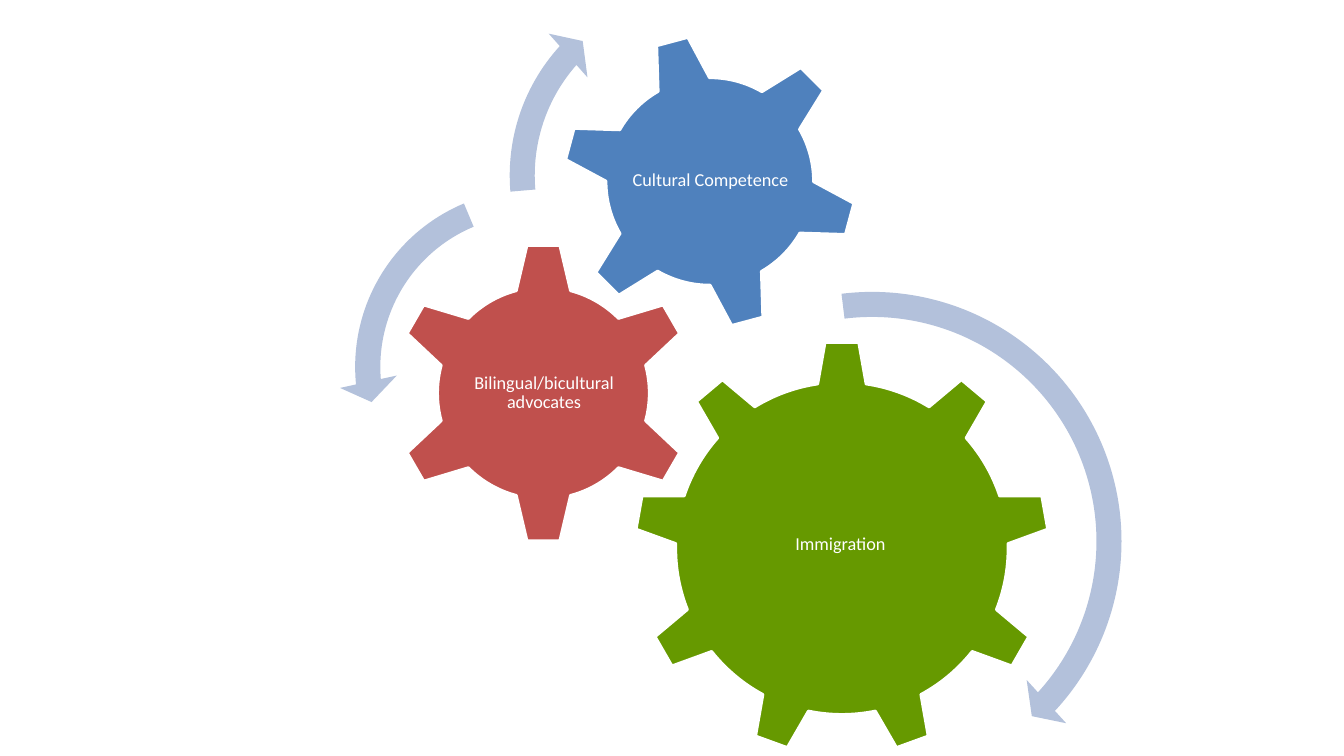
from pptx import Presentation
from pptx.dml.color import RGBColor
from pptx.enum.shapes import MSO_SHAPE as Preset
from pptx.enum.text import MSO_ANCHOR as Anchor, PP_ALIGN as Align
from pptx.util import Inches, Pt

COLORS = {
    "immigration": "669900",
    "advocates": "C0504D",
    "competence": "4F81BD",
    "arrow": "B3C1DB",
    "white": "FFFFFF",
}


def color(name):
    return RGBColor.from_string(COLORS[name])


def add_filled_square(group, preset, left, top, size, fill):
    """Add a preset shape of equal width and height, without a shadow."""
    shape = group.shapes.add_shape(
        preset, Inches(left), Inches(top), Inches(size), Inches(size))
    shape.shadow.inherit = False
    shape.fill.solid()
    shape.fill.fore_color.rgb = color(fill)
    return shape


def add_gear(group, preset, left, top, size, fill, rotation=0):
    gear = add_filled_square(group, preset, left, top, size, fill)
    gear.rotation = rotation
    gear.line.color.rgb = color("white")
    gear.line.width = Pt(2)


def add_label(group, text, left, top, width, height):
    label = group.shapes.add_textbox(
        Inches(left), Inches(top), Inches(width), Inches(height))
    frame = label.text_frame
    frame.word_wrap = True
    frame.vertical_anchor = Anchor.MIDDLE
    frame.margin_left = frame.margin_right = Inches(0.02)
    frame.margin_top = frame.margin_bottom = Inches(0.02)
    paragraph = frame.paragraphs[0]
    paragraph.text = text
    paragraph.alignment = Align.CENTER
    paragraph.line_spacing = 0.9
    paragraph.font.name = "Calibri"
    paragraph.font.size = Pt(13)
    paragraph.font.color.rgb = color("white")


def add_turn_arrow(group, preset, left, top, size, adjustments):
    arrow = add_filled_square(group, preset, left, top, size, "arrow")
    arrow.line.fill.background()
    for index, value in enumerate(adjustments):
        arrow.adjustments[index] = value


def main():
    presentation = Presentation()
    presentation.slide_width = Inches(13.33)
    presentation.slide_height = Inches(7.5)
    slide = presentation.slides.add_slide(presentation.slide_layouts[6])
    group = slide.shapes.add_group_shape()

    add_gear(group, Preset.GEAR_9, 6.29, 3.38, 4.12, "immigration")
    add_label(group, "Immigration ", 7.12, 4.34, 2.47, 2.12)
    add_gear(group, Preset.GEAR_6, 3.89, 2.4, 3, "advocates")
    add_label(group, "Bilingual/bicultural advocates", 4.65, 3.16, 1.49, 1.48)
    add_gear(group, Preset.GEAR_6, 5.57, 0.33, 2.94, "competence", rotation=345)
    add_label(group, "Cultural Competence", 6.22, 0.97, 1.65, 1.65)

    # Adjustments: band width, head angle, end angle, start angle, head width
    add_turn_arrow(group, Preset.CIRCULAR_ARROW, 6.01, 2.73, 5.28,
                   (0.047, 2.99, 25.57, 157.77, 0.055))
    add_turn_arrow(group, Preset.LEFT_CIRCULAR_ARROW, 3.36, 1.72, 3.84,
                   (0.065, 4.3, 104.89, 148.38, 0.075))
    add_turn_arrow(group, Preset.CIRCULAR_ARROW, 4.89, -0.33, 4.14,
                   (0.06, 3.94, 133.14, 105.08, 0.07))

    presentation.save("out.pptx")


if __name__ == "__main__":
    main()
